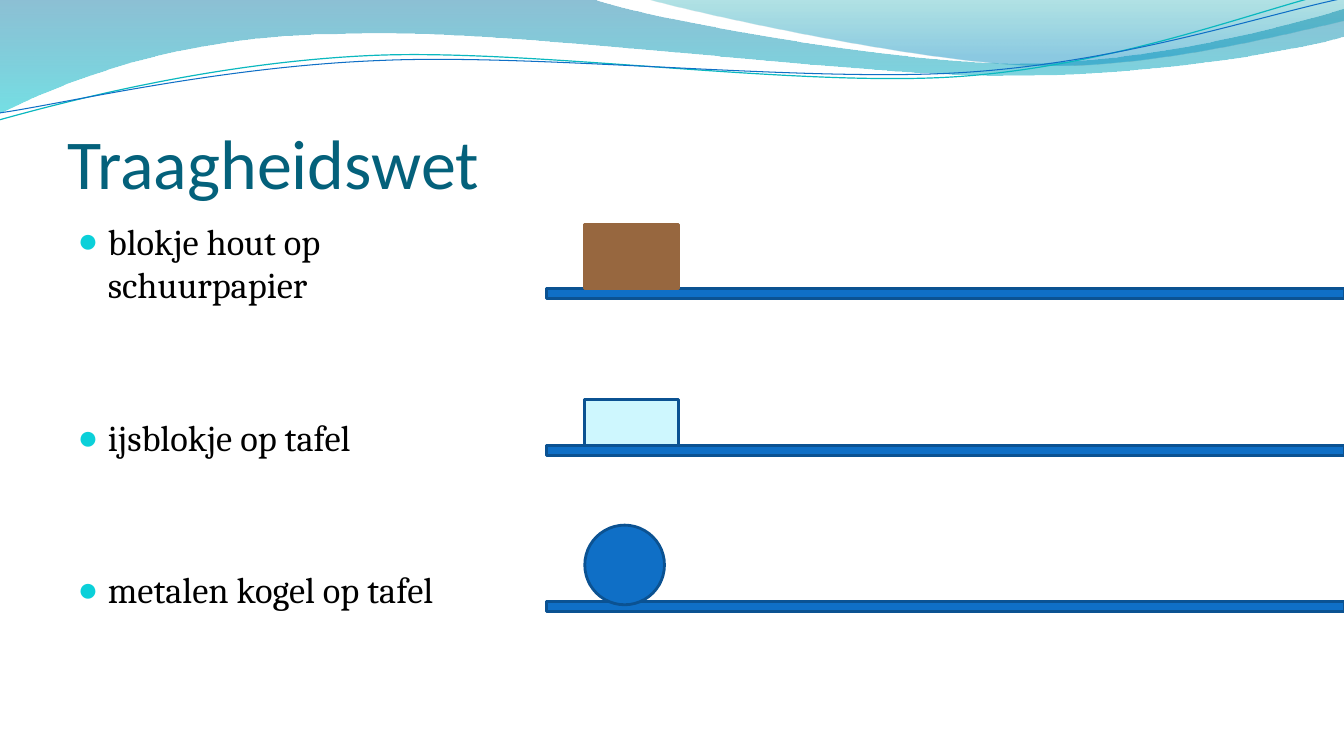
from lxml.etree import SubElement as Sub
from pptx import Presentation
from pptx.dml.color import RGBColor as RGB
from pptx.enum.shapes import MSO_SHAPE as SHAPE
from pptx.enum.text import MSO_ANCHOR as ANCHOR, MSO_AUTO_SIZE as AUTO, PP_ALIGN as ALIGN
from pptx.oxml.ns import qn
from pptx.util import Inches, Pt

PX = 9144  # EMU per px, 100 px to the inch

BLUE = RGB(0x0F, 0x6F, 0xC6)
EDGE = RGB(0x0B, 0x52, 0x92)
WOOD = RGB(0x97, 0x67, 0x3F)
ICE = RGB(0xCE, 0xF7, 0xFE)
TEAL = RGB(0x0A, 0xB8, 0xBF)
BULLET = RGB(0x0B, 0xD0, 0xD9)
TITLE = RGB(0x04, 0x61, 0x7B)
BLACK = RGB(0, 0, 0)
DEEP = RGB(0x00, 0x74, 0xA1)
AQUA = RGB(0x00, 0xC6, 0xCF)
GREEN = RGB(0x00, 0xA1, 0xA9)
SKY = RGB(0x00, 0x8B, 0xBF)

# Each wave is a start point, then line ends (2 numbers) or curves (6 numbers)
BAND = [(0, -1), (587, -1), (634, 17, 885, 63, 1011, 63),
        (1138, 63, 1278, 26, 1333, 9), (1335, 36),
        (1311, 44, 1160, 76, 994, 75), (829, 75, 509, 28, 343, 34),
        (172, 35, 61, 83, -1, 113)]
CREST = [(639, -1), (679, 11, 909, 62, 1025, 65),
         (1141, 69, 1282, 32, 1333, 21), (1333, 0)]
UPPER = [(-1, 119), (64, 101, 211, 62, 369, 55),
         (527, 48, 790, 87, 950, 76), (1110, 65, 1252, 8, 1331, -10)]
LOWER = [(0, 112), (63, 103, 218, 66, 378, 60),
         (537, 53, 796, 82, 955, 72), (1115, 62, 1255, 14, 1334, -2)]

# Text and space before it in points
ITEMS = [("blokje hout op schuurpapier", 0),
         ("ijsblokje op tafel", 78),
         ("metalen kogel op tafel", 77.5)]


def place(shape, *box):
    shape.left, shape.top, shape.width, shape.height = (n * PX for n in box)


def draw(slide, wave, close):
    """Freeform whose six-number parts become Bézier curves."""
    dots = [dot for part in wave for dot in zip(part[::2], part[1::2])]
    pen = slide.shapes.build_freeform(*dots[0], scale=PX)
    pen.add_line_segments(dots[1:], close=close)
    shape = pen.convert_to_shape()
    shape.shadow.inherit = False
    legs = iter(list(shape._element.iter(qn("a:lnTo"))))
    for part in wave[1:]:
        leg = next(legs)
        if len(part) == 6:
            leg.tag = qn("a:cubicBezTo")
            for _ in range(2):
                spare = next(legs)
                leg.append(spare[0])
                spare.getparent().remove(spare)
    return shape


def add_fill(slide, wave, stops):
    """Closed wave with a see-through gradient from top to bottom."""
    shape = draw(slide, wave, True)
    shape.line.fill.background()
    shape.fill.gradient()
    grad = shape.fill._xPr.find(qn("a:gradFill"))
    for child in list(grad):
        grad.remove(child)
    row = Sub(grad, qn("a:gsLst"))
    for pos, color, alpha in stops:
        stop = Sub(row, qn("a:gs"), pos=str(pos * 1000))
        tint = Sub(stop, qn("a:srgbClr"), val=str(color))
        Sub(tint, qn("a:alpha"), val=str(alpha * 1000))
    Sub(grad, qn("a:lin"), ang="5400000", scaled="0")


def add_line(slide, wave, color, width):
    shape = draw(slide, wave, False)
    shape.fill.background()
    shape.line.color.rgb = color
    shape.line.width = Pt(width)


def add_block(slide, kind, box, fill, edge=EDGE):
    shape = slide.shapes.add_shape(kind, *(n * PX for n in box))
    shape.shadow.inherit = False
    shape.fill.solid()
    shape.fill.fore_color.rgb = fill
    shape.line.color.rgb = edge
    shape.line.width = Pt(2)


def set_font(para, name, size, color):
    para.font.name = name
    para.font.size = Pt(size)
    para.font.color.rgb = color
    para.alignment = ALIGN.LEFT


def set_title(title, text):
    place(title, 67, 77, 1200, 125)
    frame = title.text_frame
    frame.text = text
    frame.auto_size = AUTO.NONE
    frame.vertical_anchor = ANCHOR.BOTTOM
    frame.margin_left = frame.margin_right = frame.margin_bottom = 0
    frame.margin_top = 5 * PX
    set_font(frame.paragraphs[0], "Calibri", 50, TITLE)


def set_list(body, items):
    place(body, 67, 212, 417, 480)
    frame = body.text_frame
    frame.text = "\n".join(text for text, gap in items)
    frame.auto_size = AUTO.NONE
    frame.vertical_anchor = ANCHOR.TOP
    for para, (text, gap) in zip(frame.paragraphs, items):
        set_font(para, "Cambria", 26, BLACK)
        para.space_before = Pt(gap)
        props = para._p.get_or_add_pPr()
        props.set("marL", str(30 * PX))
        props.set("indent", str(-30 * PX))
        Sub(Sub(props, qn("a:buClr")), qn("a:srgbClr"), val=str(BULLET))
        Sub(props, qn("a:buSzPct"), val="95000")
        Sub(props, qn("a:buFont"), typeface="Arial")
        Sub(props, qn("a:buChar"), char="●")
        # Character defaults come last in the paragraph properties
        props.append(props.find(qn("a:defRPr")))


def main():
    deck = Presentation()
    deck.slide_width, deck.slide_height = Inches(13.33), Inches(7.5)
    slide = deck.slides.add_slide(deck.slide_layouts[1])
    title, body = slide.placeholders

    # Waves along the top
    add_fill(slide, BAND, [(0, DEEP, 45), (100, AQUA, 55)])
    add_fill(slide, CREST, [(0, GREEN, 30), (80, SKY, 45)])
    add_line(slide, UPPER, TEAL, 0.85)
    add_line(slide, LOWER, BLUE, 0.75)

    # Text, in front of the waves
    for holder in (title, body):
        slide.shapes._spTree.append(holder._element)
    set_title(title, "Traagheidswet")
    set_list(body, ITEMS)

    # Surfaces, then the things that lie on them
    for top in (286, 442, 597):
        add_block(slide, SHAPE.RECTANGLE, (542, top, 791, 10), BLUE)
    add_block(slide, SHAPE.RECTANGLE, (580, 223, 93, 63), WOOD, WOOD)
    add_block(slide, SHAPE.RECTANGLE, (580, 396, 93, 46), ICE)
    add_block(slide, SHAPE.OVAL, (580, 521, 79, 79), BLUE)

    deck.save("out.pptx")


if __name__ == "__main__":
    main()
